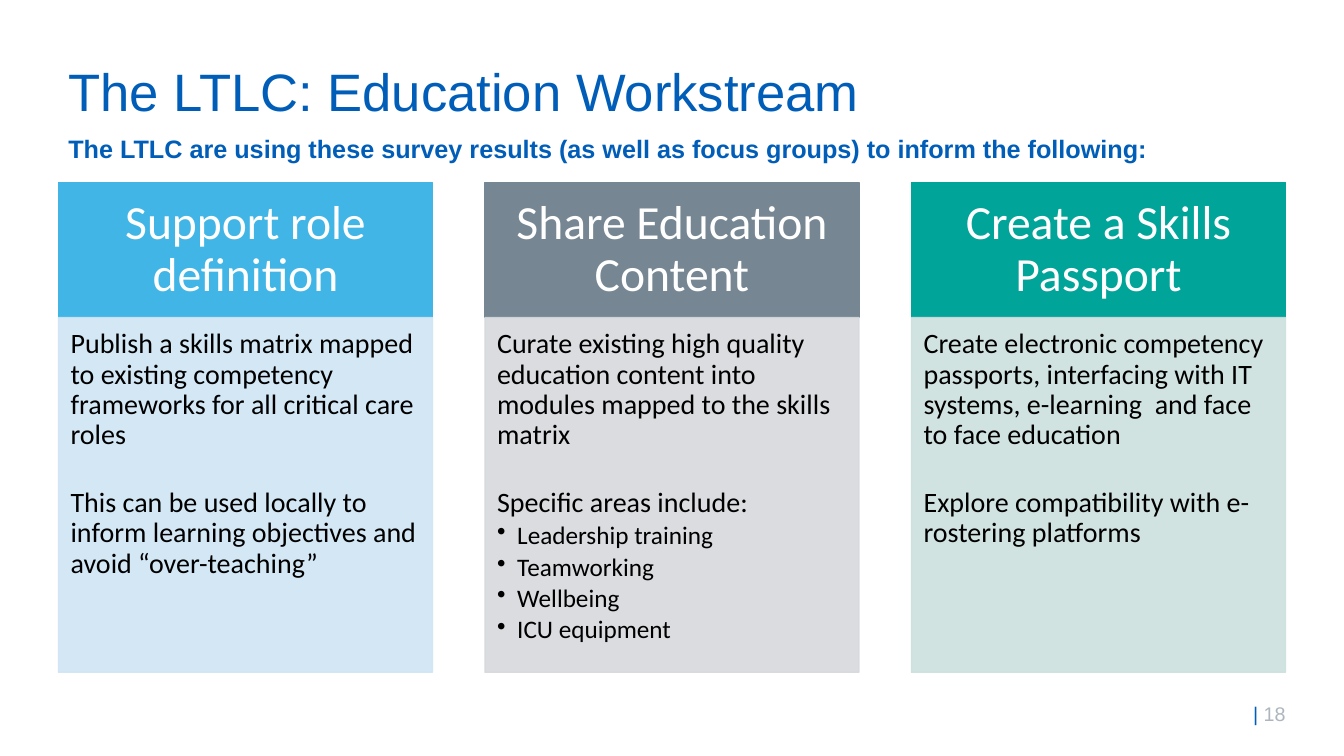
from dataclasses import dataclass

from lxml.etree import SubElement
from pptx import Presentation
from pptx.dml.color import RGBColor
from pptx.enum.shapes import MSO_SHAPE
from pptx.enum.text import MSO_ANCHOR, PP_ALIGN
from pptx.oxml.ns import qn
from pptx.util import Inches, Pt


@dataclass(frozen=True)
class Theme:
    """Colours, fonts and type sizes of the slide."""
    blue: str = "005EB8"
    grey: str = "ADB6BE"
    white: str = "FFFFFF"
    black: str = "000000"
    heading_font: str = "Arial"
    card_font: str = "Calibri"
    title: float = 37.6
    subtitle: float = 18
    card_title: float = 34
    card_text: float = 20
    card_bullet: float = 18
    page_number: float = 14.1


THEME = Theme()

CARDS = [
    ("Support role definition", "41B6E6", "CFE5F5",
     ["Publish a skills matrix mapped to existing competency frameworks for all critical care roles",
      "This can be used locally to inform learning objectives and avoid “over-teaching”"], []),
    ("Share Education Content", "768692", "D6D9DC",
     ["Curate existing high quality education content into modules mapped to the skills matrix",
      "Specific areas include:"],
     ["Leadership training", "Teamworking", "Wellbeing", "ICU equipment"]),
    ("Create a Skills Passport", "00A499", "CCE0DE",
     ["Create electronic competency passports, interfacing with IT systems, e-learning  and face to face education",
      "Explore compatibility with e-rostering platforms"], []),
]


def apply_format(target, values):
    """Set each attribute named in values on target."""
    for name, value in values.items():
        setattr(target, name, value)


def add_run(paragraph, text, font, size, color, bold=False):
    """Append a formatted run to a paragraph."""
    run = paragraph.add_run()
    run.text = text
    apply_format(run.font, {"name": font, "size": Pt(size), "bold": bold})
    run.font.color.rgb = RGBColor.from_string(color)


def format_frame(frame, insets, anchor=MSO_ANCHOR.TOP, wrap=True):
    """Set the insets in inches, the anchor and the wrapping of a text frame."""
    sides = ("margin_left", "margin_top", "margin_right", "margin_bottom")
    apply_format(frame, dict(zip(sides, map(Inches, insets))))
    apply_format(frame, {"vertical_anchor": anchor, "word_wrap": wrap})


def add_bullet(paragraph, indent):
    """Give a paragraph a round bullet with a hanging indent."""
    properties = paragraph._p.get_or_add_pPr()
    properties.set("marL", str(Inches(indent)))
    properties.set("indent", str(-Inches(indent)))
    SubElement(properties, qn("a:buChar")).set("char", "•")


def add_panel(slide, box, color, opacity=100):
    """Add a rectangle filled and outlined in one colour."""
    shape = slide.shapes.add_shape(MSO_SHAPE.RECTANGLE, *map(Inches, box))
    shape.shadow.inherit = False
    shape.line.width = Pt(1)
    for fill in (shape.fill, shape.line.fill):
        fill.solid()
        fill.fore_color.rgb = RGBColor.from_string(color)
    if opacity < 100:
        for element in shape._element.spPr.iter(qn("a:srgbClr")):
            SubElement(element, qn("a:alpha")).set("val", str(opacity * 1000))
    return shape


def add_card(slide, box, card, header_height=1.34):
    """Add a heading panel with its body panel below, inside the box."""
    left, top, width, height = box
    heading, strong, pale, texts, bullets = card

    header = add_panel(slide, (left, top, width, header_height), strong)
    format_frame(header.text_frame, (0.26, 0.15, 0.26, 0.15), MSO_ANCHOR.MIDDLE)
    paragraph = header.text_frame.paragraphs[0]
    apply_format(paragraph, {"alignment": PP_ALIGN.CENTER, "line_spacing": 0.9})
    add_run(paragraph, heading, THEME.card_font, THEME.card_title, THEME.white)

    body = add_panel(slide, (left, top + header_height, width, height - header_height), pale, 90)
    frame = body.text_frame
    format_frame(frame, (0.12, 0.12, 0.16, 0.17))
    for index, text in enumerate(texts + bullets):
        paragraph = frame.add_paragraph() if index else frame.paragraphs[0]
        is_bullet = index >= len(texts)
        apply_format(paragraph, {"alignment": PP_ALIGN.LEFT, "line_spacing": 0.9,
                                 "space_after": Pt(3 if index else 27)})
        if is_bullet:
            add_bullet(paragraph, 0.2)
        size = THEME.card_bullet if is_bullet else THEME.card_text
        add_run(paragraph, text, THEME.card_font, size, THEME.black)


def add_cards(slide, box, gap=0.52):
    """Spread the cards evenly across the box."""
    left, top, width, height = box
    card_width = (width - gap * (len(CARDS) - 1)) / len(CARDS)
    for index, card in enumerate(CARDS):
        add_card(slide, (left + index * (card_width + gap), top, card_width, height), card)


def place_title(slide, box, text):
    """Move the title placeholder to the box and fill it."""
    title = slide.shapes.title
    apply_format(title, dict(zip(("left", "top", "width", "height"), map(Inches, box))))
    format_frame(title.text_frame, (0.1, 0.05, 0.1, 0.05), MSO_ANCHOR.MIDDLE)
    paragraph = title.text_frame.paragraphs[0]
    apply_format(paragraph, {"alignment": PP_ALIGN.LEFT, "line_spacing": 0.9})
    add_run(paragraph, text, THEME.heading_font, THEME.title, THEME.blue)


def add_label(slide, box, parts, size, bold=False):
    """Add a one-line text box made of (text, colour) parts."""
    label = slide.shapes.add_textbox(*map(Inches, box))
    format_frame(label.text_frame, (0.1, 0.05, 0.1, 0.05), wrap=False)
    paragraph = label.text_frame.paragraphs[0]
    paragraph.alignment = PP_ALIGN.LEFT
    for text, color in parts:
        add_run(paragraph, text, THEME.heading_font, size, color, bold)


def main():
    """Build the slide and save the presentation."""
    presentation = Presentation()
    apply_format(presentation, {"slide_width": Inches(13.33), "slide_height": Inches(7.5)})
    slide = presentation.slides.add_slide(presentation.slide_layouts.get_by_name("Title Only"))
    place_title(slide, (0.58, 0.6, 12.18, 0.67), "The LTLC: Education Workstream")
    add_label(slide, (0.58, 1.27, 11.23, 0.4),
              [("The LTLC are using these survey results (as well as focus groups) "
                "to inform the following:", THEME.blue)], THEME.subtitle, bold=True)
    add_cards(slide, (0.58, 1.81, 12.17, 4.86))
    add_label(slide, (12.33, 6.91, 0.94, 0.34),
              [("| ", THEME.blue), ("18", THEME.grey)], THEME.page_number)
    presentation.save("out.pptx")


if __name__ == "__main__":
    main()
